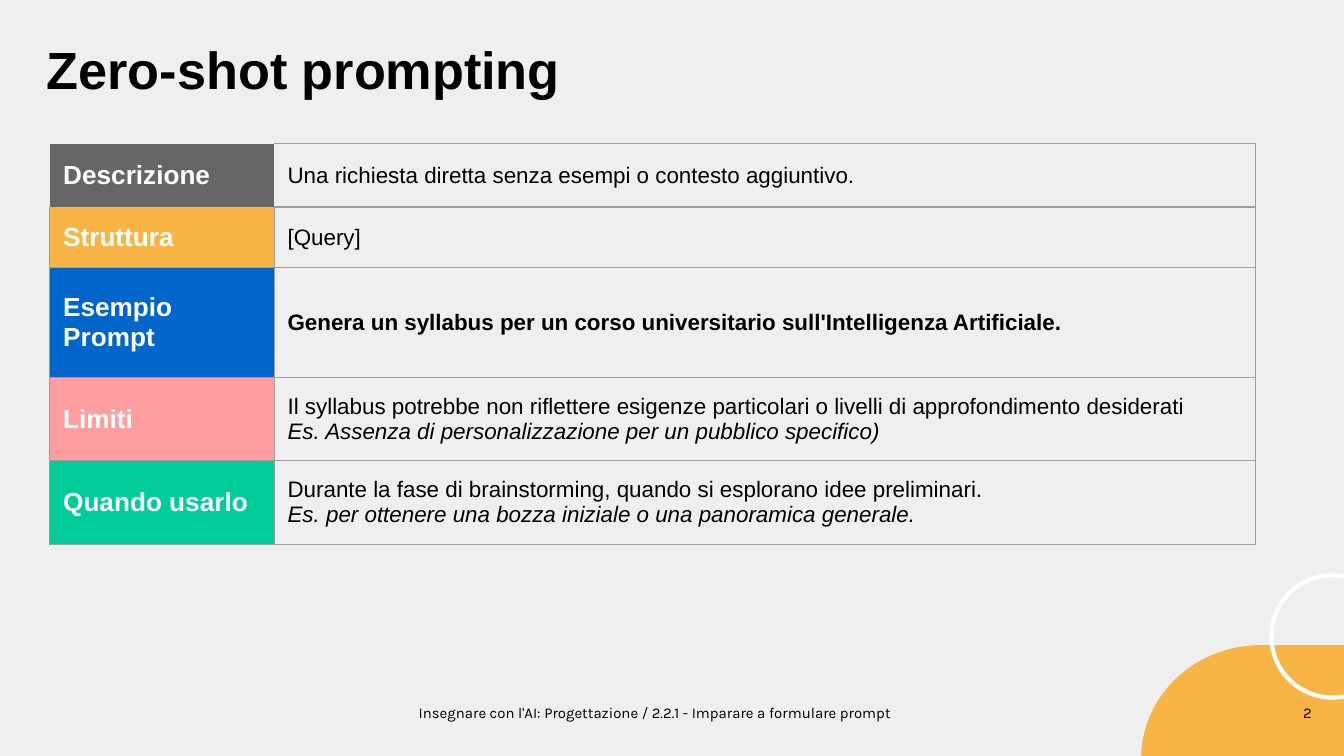
from dataclasses import dataclass

from lxml.etree import SubElement
from pptx import Presentation
from pptx.dml.color import RGBColor
from pptx.enum.shapes import MSO_SHAPE as Shape
from pptx.enum.text import MSO_ANCHOR as Anchor, PP_ALIGN as Align
from pptx.oxml.ns import qn
from pptx.util import Inches, Pt


@dataclass(frozen=True)
class Theme:
    background: str = "EFEFEF"
    ink: str = "000000"
    white: str = "FFFFFF"
    border: str = "9E9E9E"
    gray: str = "666666"
    orange: str = "F8B546"
    blue: str = "0066CC"
    pink: str = "FF9E9E"
    green: str = "00CC99"
    font: str = "Arial"
    footer_font: str = "Karla"
    title_size: float = 28
    label_size: float = 14
    body_size: float = 12
    footer_size: float = 8
    border_width: float = 0.75
    ring_width: float = 2.25


class SlideBuilder:
    def __init__(self, slide, theme):
        self.slide = slide
        self.theme = theme
        self.paint(slide.background.fill, theme.background)

    def paint(self, fill, color):
        """Fill with a solid colour, or with nothing if color is None."""
        if color is None:
            fill.background()
        else:
            fill.solid()
            fill.fore_color.rgb = RGBColor.from_string(color)

    def run(self, paragraph, text, size, color=None, font=None, bold=False, italic=False):
        run = paragraph.add_run()
        run.text = text
        run.font.size = Pt(size)
        run.font.name = font or self.theme.font
        run.font.bold = bold
        run.font.italic = italic
        run.font.color.rgb = RGBColor.from_string(color or self.theme.ink)

    def text(self, box, text, size, inset, align=Align.LEFT, **style):
        frame = self.slide.shapes.add_textbox(*map(Inches, box)).text_frame
        frame.word_wrap = True
        frame.vertical_anchor = Anchor.TOP
        frame.margin_left = frame.margin_right = Inches(inset)
        frame.margin_top = frame.margin_bottom = Inches(inset)
        paragraph = frame.paragraphs[0]
        paragraph.alignment = align
        self.run(paragraph, text, size, **style)

    def shape(self, kind, box, rotation, fill=None, line=None):
        shape = self.slide.shapes.add_shape(kind, *map(Inches, box))
        shape.shadow.inherit = False
        shape.rotation = rotation
        self.paint(shape.fill, fill)
        self.paint(shape.line.fill, line)
        if line:
            shape.line.width = Pt(self.theme.ring_width)

    def borders(self, cell, sides):
        """Draw the given sides (of "LRTB") and clear the others."""
        properties = cell._tc.get_or_add_tcPr()
        for side in "LRTB":
            line = SubElement(properties, qn(f"a:ln{side}"))
            if side in sides:
                line.set("w", str(Pt(self.theme.border_width)))
                solid = SubElement(line, qn("a:solidFill"))
                SubElement(solid, qn("a:srgbClr")).set("val", self.theme.border)
            else:
                line.set("w", "0")
                SubElement(line, qn("a:noFill"))

    def cell(self, cell, align, sides, fill=None):
        """Style a cell and return its paragraph."""
        self.borders(cell, sides)
        self.paint(cell.fill, fill)
        cell.vertical_anchor = Anchor.MIDDLE
        cell.margin_left = cell.margin_right = Inches(0.1)
        cell.margin_top = cell.margin_bottom = Inches(0.1)
        paragraph = cell.text_frame.paragraphs[0]
        paragraph.alignment = align
        return paragraph

    def table(self, left, top, widths, rows):
        theme = self.theme
        heights = [row[0] for row in rows]
        table = self.slide.shapes.add_table(
            len(rows), len(widths), Inches(left), Inches(top),
            Inches(sum(widths)), Inches(sum(heights))).table
        table.first_row = table.horz_banding = False
        for column, width in zip(table.columns, widths):
            column.width = Inches(width)
        for index, (height, label, color, body, example, bold) in enumerate(rows):
            table.rows[index].height = Inches(height)
            align = Align.LEFT if index else Align.JUSTIFY
            label_sides = {0: "", 1: "LRB"}.get(index, "LRTB")
            body_sides = "LRTB" if index else "RTB"
            heading = self.cell(table.cell(index, 0), align, label_sides, color)
            self.run(heading, label, theme.label_size, theme.white, bold=True)
            content = self.cell(table.cell(index, 1), align, body_sides)
            self.run(content, body, theme.body_size, bold=bold)
            if example:
                content.add_line_break()
                self.run(content, example, theme.body_size, italic=True)


def main():
    theme = Theme()
    deck = Presentation()
    deck.slide_width = Inches(10)
    deck.slide_height = Inches(10 * 9 / 16)
    page = SlideBuilder(deck.slides.add_slide(deck.slide_layouts[6]), theme)

    footer = {"size": theme.footer_size, "inset": 0.07, "font": theme.footer_font}
    page.text((0.38, 5.17, 8.99, 0.29),
              "Insegnare con l'AI: Progettazione / 2.2.1 - Imparare a formulare prompt",
              align=Align.CENTER, **footer)
    page.shape(Shape.FLOWCHART_DELAY, (8.49, 4.8, 1.78, 1.69), 180, fill=theme.orange)
    page.shape(Shape.OVAL, (9.46, 4.28, 0.91, 0.91), 270, line=theme.white)
    page.text((9.22, 5.17, 0.61, 0.46), "2", align=Align.RIGHT, **footer)

    page.text((0.25, 0.18, 8.97, 0.7), "Zero-shot prompting", theme.title_size, 0.1,
              bold=True)

    # Height, label, label colour, body, example, bold body
    rows = [
        (0.47, "Descrizione", theme.gray,
         "Una richiesta diretta senza esempi o contesto aggiuntivo.", None, False),
        (0.45, "Struttura", theme.orange, "[Query]", None, False),
        (0.82, "Esempio Prompt", theme.blue,
         "Genera un syllabus per un corso universitario sull'Intelligenza Artificiale.",
         None, True),
        (0.62, "Limiti", theme.pink,
         "Il syllabus potrebbe non riflettere esigenze particolari o livelli di "
         "approfondimento desiderati ",
         "Es. Assenza di personalizzazione per un pubblico specifico)", False),
        (0.62, "Quando usarlo", theme.green,
         "Durante la fase di brainstorming, quando si esplorano idee preliminari. ",
         "Es. per ottenere una bozza iniziale o una panoramica generale.", False),
    ]
    page.table(0.37, 1.07, (1.67, 7.3), rows)
    deck.save("out.pptx")


if __name__ == "__main__":
    main()
